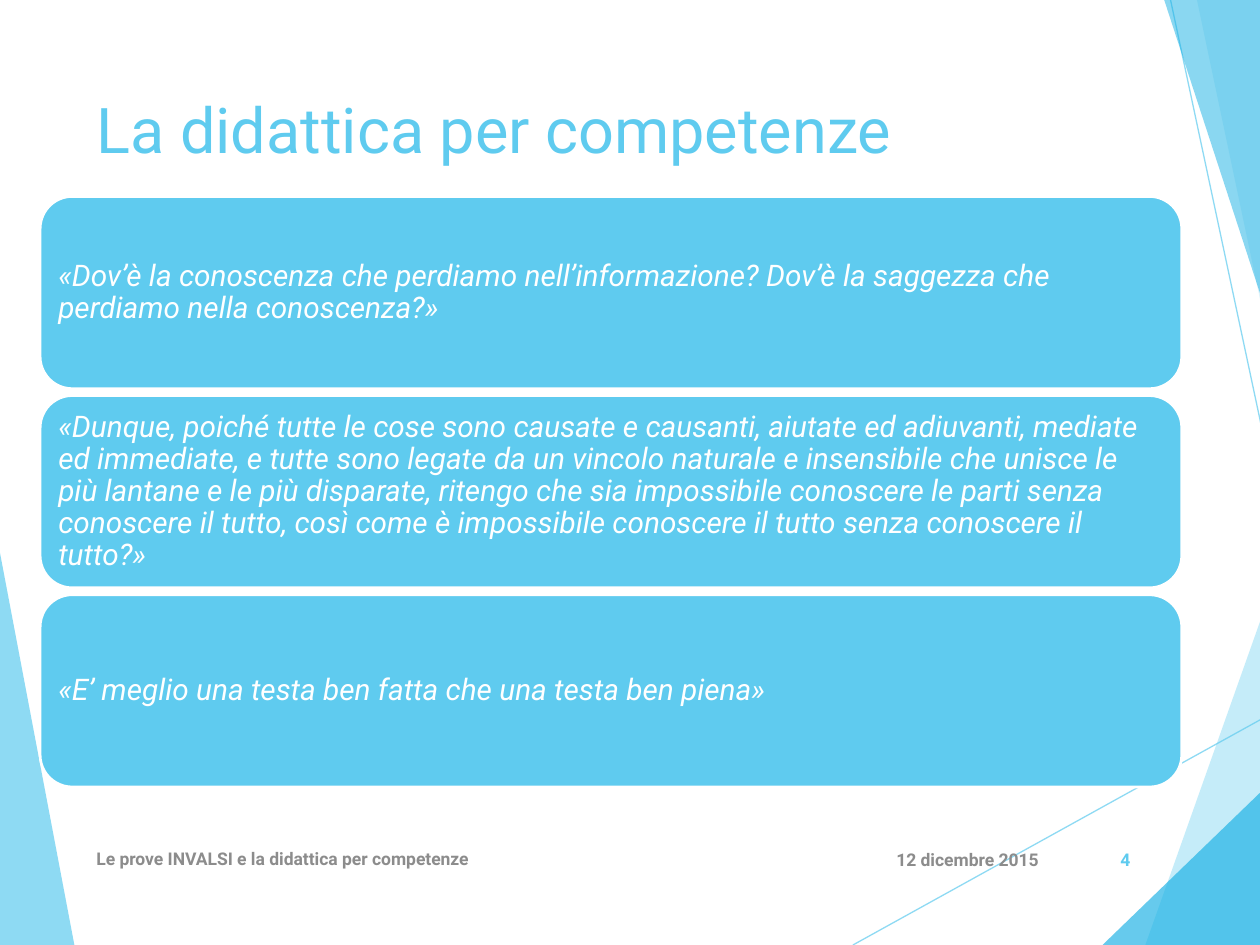
from lxml import etree
from pptx import Presentation
from pptx.dml.color import RGBColor
from pptx.enum.shapes import MSO_CONNECTOR, MSO_SHAPE
from pptx.enum.text import MSO_ANCHOR, PP_ALIGN
from pptx.oxml.ns import qn
from pptx.util import Pt

LINE = MSO_CONNECTOR.STRAIGHT
ROUND = MSO_SHAPE.ROUNDED_RECTANGLE
TOP, MIDDLE = MSO_ANCHOR.TOP, MSO_ANCHOR.MIDDLE
LEFT, RIGHT = PP_ALIGN.LEFT, PP_ALIGN.RIGHT

SKY = RGBColor(0x5F, 0xCB, 0xEF)
DEEP = RGBColor(0x17, 0xB0, 0xE4)
GRAY = RGBColor(0x8C, 0x8C, 0x8C)
WHITE = RGBColor(0xFF, 0xFF, 0xFF)

WIDE, HIGH, EDGE = 720, 540, 869

FACETS = [
    ([(846, 0), (654.5, HIGH), (EDGE, HIGH), (EDGE, 0)], SKY, 36),
    ([(684, 0), (797.8, HIGH), (EDGE, HIGH), (EDGE, 0)], SKY, 20),
    ([(630, HIGH), (EDGE, 309), (EDGE, HIGH)], DEEP, 66),
    ([(665.3, 0), (841.7, HIGH), (EDGE, HIGH), (EDGE, 0)], DEEP, 50),
]

QUOTES = [
    "«Dov’è la conoscenza che perdiamo nell’informazione? Dov’è la saggezza che "
    "perdiamo nella conoscenza?»",
    "«Dunque, poiché tutte le cose sono causate e causanti, aiutate ed adiuvanti, "
    "mediate ed immediate, e tutte sono legate da un vincolo naturale e insensibile "
    "che unisce le più lantane e le più disparate, ritengo che sia impossibile "
    "conoscere le parti senza conoscere il tutto, così come è impossibile conoscere "
    "il tutto senza conoscere il tutto?»",
    "«E’ meglio una testa ben fatta che una testa ben piena»",
]


def assign(item, values):
    for name, value in values.items():
        setattr(item, name, value)


class Canvas:
    """Holds the type style and the current slide, and draws each kind of element."""

    def __init__(self, slide, font):
        self.shapes = slide.shapes
        self.font = font

    def fade(self, shape, alpha):
        color = next(shape.element.spPr.iter(qn("a:srgbClr")))
        etree.SubElement(color, qn("a:alpha"), val=str(alpha * 1000))

    def facet(self, points, color, alpha):
        start, *rest = [(Pt(x), Pt(y)) for x, y in points]
        form = self.shapes.build_freeform(*start)
        form.add_line_segments(rest, close=True)
        shape = form.convert_to_shape()
        shape.shadow.inherit = False
        shape.fill.solid()
        shape.fill.fore_color.rgb = color
        shape.line.fill.background()
        self.fade(shape, alpha)

    def line(self, *ends):
        line = self.shapes.add_connector(LINE, *map(Pt, ends))
        line.line.color.rgb = SKY
        line.line.width = Pt(0.75)
        self.fade(line, 70)
        etree.SubElement(line.element.spPr, qn("a:effectLst"))

    def label(self, shape, text, size, color, align=LEFT, anchor=MIDDLE,
              frame=None, para=None, **font):
        body = shape.text_frame
        assign(body, {"word_wrap": True, "vertical_anchor": anchor, **(frame or {})})
        first = body.paragraphs[0]
        assign(first, {"alignment": align, **(para or {})})
        run = first.add_run()
        run.text = text
        assign(run.font, {"name": self.font, "size": Pt(size), **font})
        run.font.color.rgb = color

    def text(self, box, text, size, color, **style):
        self.label(self.shapes.add_textbox(*map(Pt, box)), text, size, color, **style)

    def card(self, box, text):
        shape = self.shapes.add_shape(ROUND, *map(Pt, box))
        shape.shadow.inherit = False
        shape.fill.solid()
        shape.fill.fore_color.rgb = SKY
        shape.line.color.rgb = WHITE
        shape.line.width = Pt(1.5)
        sides = ("left", "right", "top", "bottom")
        frame = {f"margin_{side}": Pt(5) for side in sides}
        self.label(shape, text, 17, WHITE, frame=frame,
                   para={"line_spacing": 0.9}, italic=True)


def main():
    deck = Presentation()
    assign(deck, {"slide_width": Pt(WIDE), "slide_height": Pt(HIGH)})
    page = Canvas(deck.slides.add_slide(deck.slide_layouts[6]), "Roboto")

    page.facet([(0, 316), (42.5, HIGH), (0, HIGH)], SKY, 70)
    page.line(487.4, HIGH, EDGE, 329)
    page.line(668.9, 0, 784, HIGH)
    for facet in FACETS:
        page.facet(*facet)

    page.text((48, 48, 606, 104), "La didattica per competenze", 36, SKY, anchor=TOP)
    for row, quote in enumerate(QUOTES):
        page.card((23, 112.3 + row * 113.8, 652.3, 109.8), quote)

    page.text((48, 476, 439, 29), "Le prove INVALSI e la didattica per competenze",
              10, GRAY, bold=True)
    page.text((612.7, 476.6, 40.3, 29), "4", 10, SKY, align=RIGHT, bold=True)
    page.text((497.5, 476.6, 103, 29), "12 dicembre 2015", 10, GRAY,
              align=RIGHT, bold=True)
    deck.save("out.pptx")


if __name__ == "__main__":
    main()
